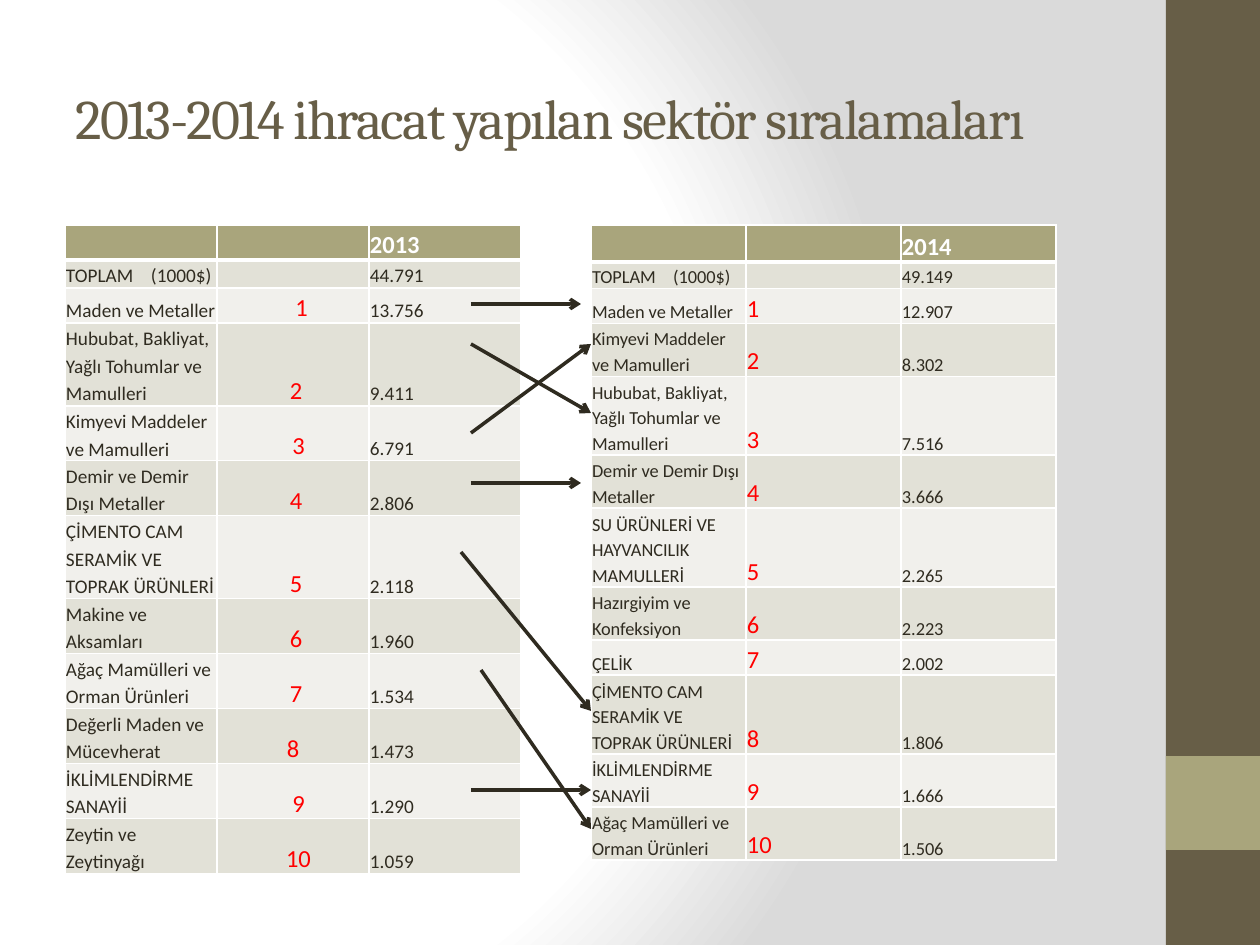
from dataclasses import dataclass

from pptx import Presentation
from pptx.dml.color import RGBColor
from pptx.enum.shapes import MSO_CONNECTOR, MSO_SHAPE
from pptx.enum.text import MSO_ANCHOR, PP_ALIGN
from pptx.oxml import parse_xml
from pptx.oxml.ns import nsdecls
from pptx.oxml.xmlchemy import OxmlElement
from pptx.slide import Slide
from pptx.table import _Cell
from pptx.util import Emu, Pt

PIXELS_PER_INCH = 126


@dataclass(frozen=True)
class Theme:
    brown: str = "675E47"
    olive: str = "A9A57C"
    ink: str = "2F2B20"
    white: str = "FFFFFF"
    gray: str = "DADADA"
    red: str = "FF0000"
    bands: tuple[str, str] = ("E2E1D7", "F1F0EC")
    heading_font: str = "Cambria"
    body_font: str = "Calibri"
    title_size: float = 32
    emphasis_size: float = 14


@dataclass(frozen=True)
class Sector:
    name: str
    value: str
    lines: int
    rank_indent: int = 0


@dataclass(frozen=True)
class Ranking:
    year: str
    total: str
    left: int
    column_width: int
    header_height: int
    total_height: int
    line_heights: dict[int, int]
    unit_tab: int
    body_size: float
    rank_alignment: PP_ALIGN
    sectors: tuple[Sector, ...]


@dataclass(frozen=True)
class Arrow:
    start_x: int
    start_y: int
    end_x: int
    end_y: int


THEME = Theme()
TABLE_TOP = 225

RANKINGS = (
    Ranking("2013", "44.791", 65, 152, 35, 28, {1: 34, 2: 55, 3: 83}, 85, 11, PP_ALIGN.CENTER, (
        Sector("Maden ve Metaller", "13.756", 1, 17),
        Sector("Hububat, Bakliyat, Yağlı Tohumlar ve Mamulleri", "9.411", 3, 6),
        Sector("Kimyevi Maddeler ve Mamulleri", "6.791", 2, 11),
        Sector("Demir ve Demir Dışı Metaller", "2.806", 2, 6),
        Sector("ÇİMENTO CAM SERAMİK VE TOPRAK ÜRÜNLERİ", "2.118", 3, 6),
        Sector("Makine ve Aksamları", "1.960", 2, 6),
        Sector("Ağaç Mamülleri ve Orman Ürünleri", "1.534", 2, 6),
        Sector("Değerli Maden ve Mücevherat", "1.473", 2),
        Sector("İKLİMLENDİRME SANAYİİ", "1.290", 2, 11),
        Sector("Zeytin ve Zeytinyağı", "1.059", 2, 11),
    )),
    Ranking("2014", "49.149", 591, 155, 37, 26, {1: 35, 2: 53, 3: 79}, 81, 10.5, PP_ALIGN.LEFT, (
        Sector("Maden ve Metaller", "12.907", 1),
        Sector("Kimyevi Maddeler ve Mamulleri", "8.302", 2),
        Sector("Hububat, Bakliyat, Yağlı Tohumlar ve Mamulleri", "7.516", 3),
        Sector("Demir ve Demir Dışı Metaller", "3.666", 2),
        Sector("SU ÜRÜNLERİ VE HAYVANCILIK MAMULLERİ", "2.265", 3),
        Sector("Hazırgiyim ve Konfeksiyon", "2.223", 2),
        Sector("ÇELİK", "2.002", 1),
        Sector("ÇİMENTO CAM SERAMİK VE TOPRAK ÜRÜNLERİ", "1.806", 3),
        Sector("İKLİMLENDİRME SANAYİİ", "1.666", 2),
        Sector("Ağaç Mamülleri ve Orman Ürünleri", "1.506", 2),
    )),
)

ARROWS = (
    Arrow(471, 344, 591, 413),
    Arrow(471, 433, 591, 344),
    Arrow(461, 552, 591, 711),
    Arrow(471, 483, 581, 483),
    Arrow(471, 304, 581, 304),
    Arrow(481, 670, 591, 829),
    Arrow(471, 790, 591, 790),
)


def px(length: int) -> Emu:
    return Emu(round(length * 914400 / PIXELS_PER_INCH))


def color(value: str) -> RGBColor:
    return RGBColor.from_string(value)


def paint_background(slide: Slide) -> None:
    stops = ((0, THEME.white), (75, THEME.white), (100, THEME.gray))
    stop_list = "".join(
        f'<a:gs pos="{position * 1000}"><a:srgbClr val="{value}"/></a:gs>' for position, value in stops
    )
    slide.element.cSld.insert(0, parse_xml(
        f'<p:bg {nsdecls("p", "a")}><p:bgPr><a:gradFill rotWithShape="1"><a:gsLst>{stop_list}</a:gsLst>'
        '<a:path path="circle"><a:fillToRect l="20000" t="50000" r="100000" b="50000"/></a:path>'
        '</a:gradFill><a:effectLst/></p:bgPr></p:bg>'
    ))


def draw_block(slide: Slide, top: int, height: int, fill: str) -> None:
    shape = slide.shapes.add_shape(MSO_SHAPE.RECTANGLE, px(1166), px(top), px(94), px(height))
    shape.shadow.inherit = False
    shape.fill.solid()
    shape.fill.fore_color.rgb = color(fill)
    shape.line.fill.background()


def draw_title(slide: Slide, text: str) -> None:
    text_frame = slide.shapes.add_textbox(px(63), px(38), px(1050), px(158)).text_frame
    text_frame.word_wrap = True
    text_frame.vertical_anchor = MSO_ANCHOR.MIDDLE
    text_frame.text = text
    run = text_frame.paragraphs[0].runs[0]
    run.font.name = THEME.heading_font
    run.font.size = Pt(THEME.title_size)
    run.font.color.rgb = color(THEME.brown)
    run.font._element.set("spc", "-100")


def format_cell(cell: _Cell, fill: str, bottom_border: int = 1) -> None:
    cell.margin_left = cell.margin_right = cell.margin_top = px(1)
    cell.margin_bottom = 0
    cell.vertical_anchor = MSO_ANCHOR.BOTTOM
    properties = cell._tc.get_or_add_tcPr()
    for side, width in (("L", 1), ("R", 1), ("T", 1), ("B", bottom_border)):
        properties.append(parse_xml(
            f'<a:ln{side} {nsdecls("a")} w="{Pt(width)}"><a:solidFill>'
            f'<a:srgbClr val="{THEME.white}"/></a:solidFill></a:ln{side}>'
        ))
    cell.fill.solid()
    cell.fill.fore_color.rgb = color(fill)


def write_cell(cell: _Cell, text: str, size: float, ink: str, bold: bool = False,
               alignment: PP_ALIGN = PP_ALIGN.LEFT, indent: int = 0, tab: int = 0) -> None:
    cell.text_frame.text = text
    paragraph = cell.text_frame.paragraphs[0]
    paragraph.alignment = alignment
    paragraph.line_spacing = 1.15
    paragraph.space_after = Pt(10)
    properties = paragraph._p.get_or_add_pPr()
    if indent:
        properties.set("marL", str(px(indent)))
    if tab:
        properties.append(parse_xml(
            f'<a:tabLst {nsdecls("a")}><a:tab pos="{px(tab)}" algn="l"/></a:tabLst>'
        ))
    for run in paragraph.runs:
        run.font.name = THEME.body_font
        run.font.size = Pt(size)
        run.font.bold = bold
        run.font.color.rgb = color(ink)
    if not text:
        end_properties = OxmlElement("a:endParaRPr")
        end_properties.set("sz", str(round(size * 100)))
        paragraph._p.append(end_properties)


def draw_ranking(slide: Slide, ranking: Ranking) -> None:
    heights = [ranking.header_height, ranking.total_height]
    heights += [ranking.line_heights[sector.lines] for sector in ranking.sectors]
    table = slide.shapes.add_table(
        len(heights), 3, px(ranking.left), px(TABLE_TOP), px(3 * ranking.column_width), px(sum(heights))
    ).table
    for column in table.columns:
        column.width = px(ranking.column_width)
    for index, (row, height) in enumerate(zip(table.rows, heights)):
        row.height = px(height)
        for cell in row.cells:
            if index == 0:
                format_cell(cell, THEME.olive, bottom_border=3)
            else:
                format_cell(cell, THEME.bands[(index - 1) % 2])

    for column, text in enumerate(("", "", ranking.year)):
        write_cell(table.cell(0, column), text, THEME.emphasis_size, THEME.white, bold=True)
    for column, text in enumerate(("TOPLAM\t(1000$)", "", ranking.total)):
        tab = ranking.unit_tab if column == 0 else 0
        write_cell(table.cell(1, column), text, ranking.body_size, THEME.ink, tab=tab)
    for rank, sector in enumerate(ranking.sectors, start=1):
        name_cell, rank_cell, value_cell = table.rows[rank + 1].cells
        write_cell(name_cell, sector.name, ranking.body_size, THEME.ink)
        write_cell(rank_cell, str(rank), THEME.emphasis_size, THEME.red,
                   alignment=ranking.rank_alignment, indent=sector.rank_indent)
        write_cell(value_cell, sector.value, ranking.body_size, THEME.ink)


def draw_arrow(slide: Slide, arrow: Arrow) -> None:
    connector = slide.shapes.add_connector(
        MSO_CONNECTOR.STRAIGHT, px(arrow.start_x), px(arrow.start_y), px(arrow.end_x), px(arrow.end_y)
    )
    connector.line.width = Pt(2)
    connector.line.color.rgb = color(THEME.ink)
    tail = OxmlElement("a:tailEnd")
    tail.set("type", "arrow")
    connector.line._get_or_add_ln().append(tail)
    connector._element.spPr.append(OxmlElement("a:effectLst"))


def main() -> None:
    presentation = Presentation()
    presentation.slide_width, presentation.slide_height = px(1260), px(945)
    slide = presentation.slides.add_slide(presentation.slide_layouts[6])
    paint_background(slide)
    draw_block(slide, 0, 945, THEME.brown)
    draw_block(slide, 756, 94, THEME.olive)
    draw_title(slide, "2013-2014 ihracat yapılan sektör sıralamaları")
    for ranking in RANKINGS:
        draw_ranking(slide, ranking)
    for arrow in ARROWS:
        draw_arrow(slide, arrow)
    presentation.save("out.pptx")


if __name__ == "__main__":
    main()
